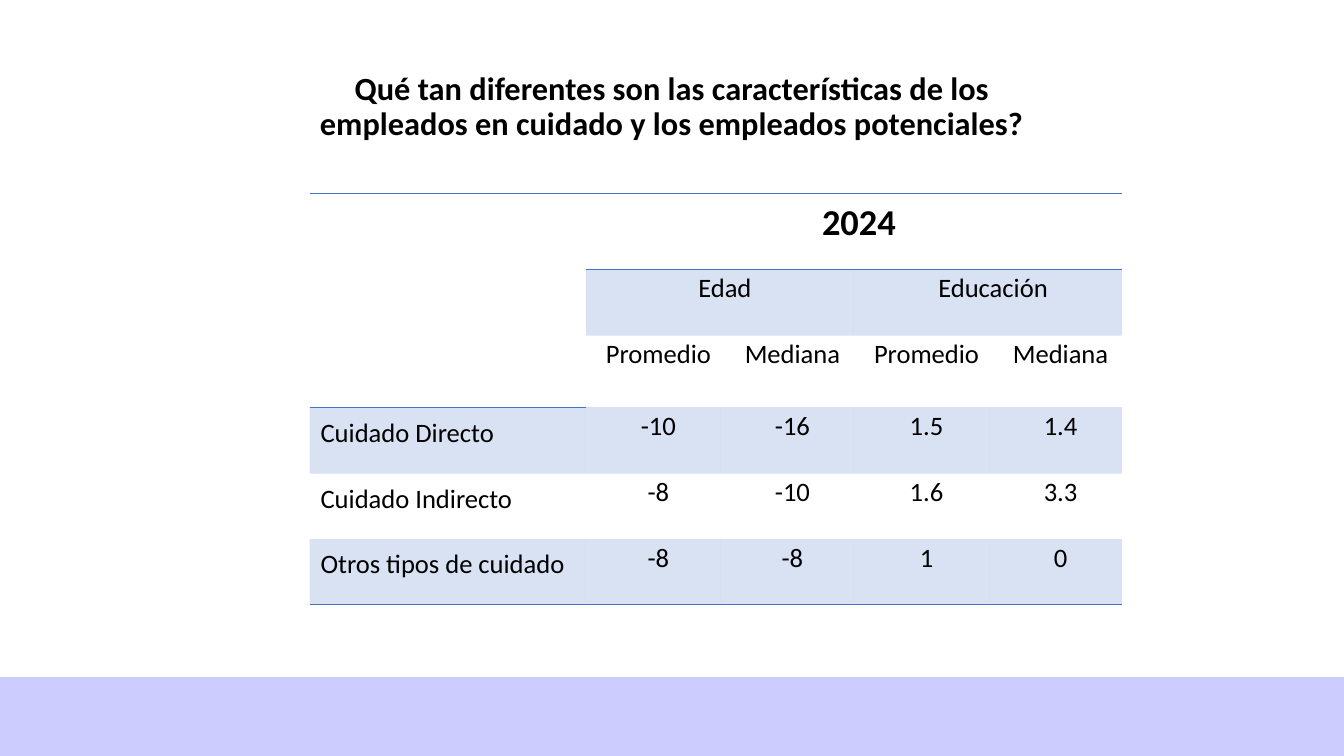
import dataclasses
import lxml.etree
import pptx
import pptx.dml.color
import pptx.enum.shapes
import pptx.enum.text
import pptx.oxml.ns
import pptx.util

Inches = pptx.util.Inches
Pt = pptx.util.Pt
Align = pptx.enum.text.PP_ALIGN
Anchor = pptx.enum.text.MSO_ANCHOR
qn = pptx.oxml.ns.qn


@dataclasses.dataclass
class Theme:
    font: str = "Calibri"
    ink: str = "000000"
    band: str = "CCCCFF"
    blue: str = "4472C4"
    tint: int = 20
    title: float = 23.1
    year: float = 26
    body: float = 19
    rule: float = 1


class Page:
    """Draws elements on one slide in the style of a theme."""

    def __init__(self, slide, theme):
        self.slide = slide
        self.theme = theme

    def color(self, code):
        return pptx.dml.color.RGBColor.from_string(code)

    def label(self, frame, text, size, bold=False, align=Align.CENTER):
        frame.text = text
        para = frame.paragraphs[0]
        para.alignment = align
        for run in para.runs:
            font = run.font
            font.name, font.size, font.bold = self.theme.font, Pt(size), bold
            font.color.rgb = self.color(self.theme.ink)
        return para

    def bar(self, box, code):
        kind = pptx.enum.shapes.MSO_SHAPE.RECTANGLE
        shape = self.slide.shapes.add_shape(kind, *map(Inches, box))
        shape.shadow.inherit = False
        shape.fill.solid()
        shape.fill.fore_color.rgb = self.color(code)
        shape.line.color.rgb = self.color(code)
        shape.line.width = Pt(self.theme.rule)

    def title(self, box, text):
        frame = self.slide.shapes.add_textbox(*map(Inches, box)).text_frame
        frame.word_wrap = True
        frame.vertical_anchor = Anchor.BOTTOM
        self.label(frame, text, self.theme.title, True).line_spacing = 0.9

    def shade(self, cell):
        cell.fill.solid()
        cell.fill.fore_color.rgb = self.color(self.theme.blue)
        code = cell._tc.tcPr.find(f".//{qn('a:srgbClr')}")
        lxml.etree.SubElement(code, qn("a:alpha"), val=str(self.theme.tint * 1000))

    def edges(self, cell, sides):
        for spot, side in enumerate("LRTB"):
            line = lxml.etree.Element(qn(f"a:ln{side}"), w=str(Pt(self.theme.rule)))
            if side in sides:
                fill = lxml.etree.SubElement(line, qn("a:solidFill"))
                lxml.etree.SubElement(fill, qn("a:srgbClr"), val=self.theme.blue)
            else:
                lxml.etree.SubElement(line, qn("a:noFill"))
            cell._tc.get_or_add_tcPr().insert(spot, line)

    def table(self, box, rows, wide, high, spans, bands, rules):
        shapes = self.slide.shapes
        grid = shapes.add_table(len(high), len(wide), *map(Inches, box)).table
        grid.first_row = grid.horz_banding = False
        for col, size in zip(grid.columns, wide):
            col.width = Inches(size)
        for row, size in zip(grid.rows, high):
            row.height = Inches(size)
        for first, last in spans:
            grid.cell(*first).merge(grid.cell(*last))
        for r, row in enumerate(rows):
            for c, text in enumerate(row):
                cell = grid.cell(r, c)
                cell.margin_left, cell.margin_right = Inches(0.11), Inches(0.01)
                cell.margin_top, cell.margin_bottom = Inches(0.03), Inches(0.24)
                head = r == 0
                stub = c == 0
                cell.vertical_anchor = Anchor.BOTTOM if head or stub else Anchor.TOP
                if text:
                    size = self.theme.year if head else self.theme.body
                    align = Align.LEFT if stub else Align.CENTER
                    self.label(cell.text_frame, text, size, head, align)
                if r in bands and (c or r > 2):
                    self.shade(cell)
                else:
                    cell.fill.background()
                self.edges(cell, rules.get((r, stub), ""))


def main():
    deck = pptx.Presentation()
    deck.slide_width, deck.slide_height = Inches(13.33), Inches(7.5)
    theme = Theme()
    page = Page(deck.slides.add_slide(deck.slide_layouts[6]), theme)
    page.bar((0, 6.72, 13.33, 0.78), theme.band)
    page.title(
        (3.07, 0.39, 7.19, 1.07),
        "Qué tan diferentes son las características de los "
        "empleados en cuidado y los empleados potenciales?",
    )
    rows = [
        ["", "2024", "", "", ""],
        ["", "Edad", "", "Educación", ""],
        ["", *["Promedio", "Mediana"] * 2],
        ["Cuidado Directo", "-10", "-16", "1.5", "1.4"],
        ["Cuidado Indirecto", "-8", "-10", "1.6", "3.3"],
        ["Otros tipos de cuidado", "-8", "-8", "1", "0"],
    ]
    page.table(
        (3.07, 1.92, 8.05, 4.08),
        rows,
        wide=[2.74, *[1.34, 1.32] * 2],
        high=[0.75, 0.66, 0.71, 0.66, 0.65, 0.65],
        spans=[((0, 0), (2, 0)), ((0, 1), (0, 4)), ((1, 1), (1, 2)), ((1, 3), (1, 4))],
        bands={1, 3, 5},
        rules={
            (0, True): "TB",
            (0, False): "TB",
            (1, False): "T",
            (2, True): "B",
            (3, True): "T",
            (5, True): "B",
            (5, False): "B",
        },
    )
    deck.save("out.pptx")


if __name__ == "__main__":
    main()
